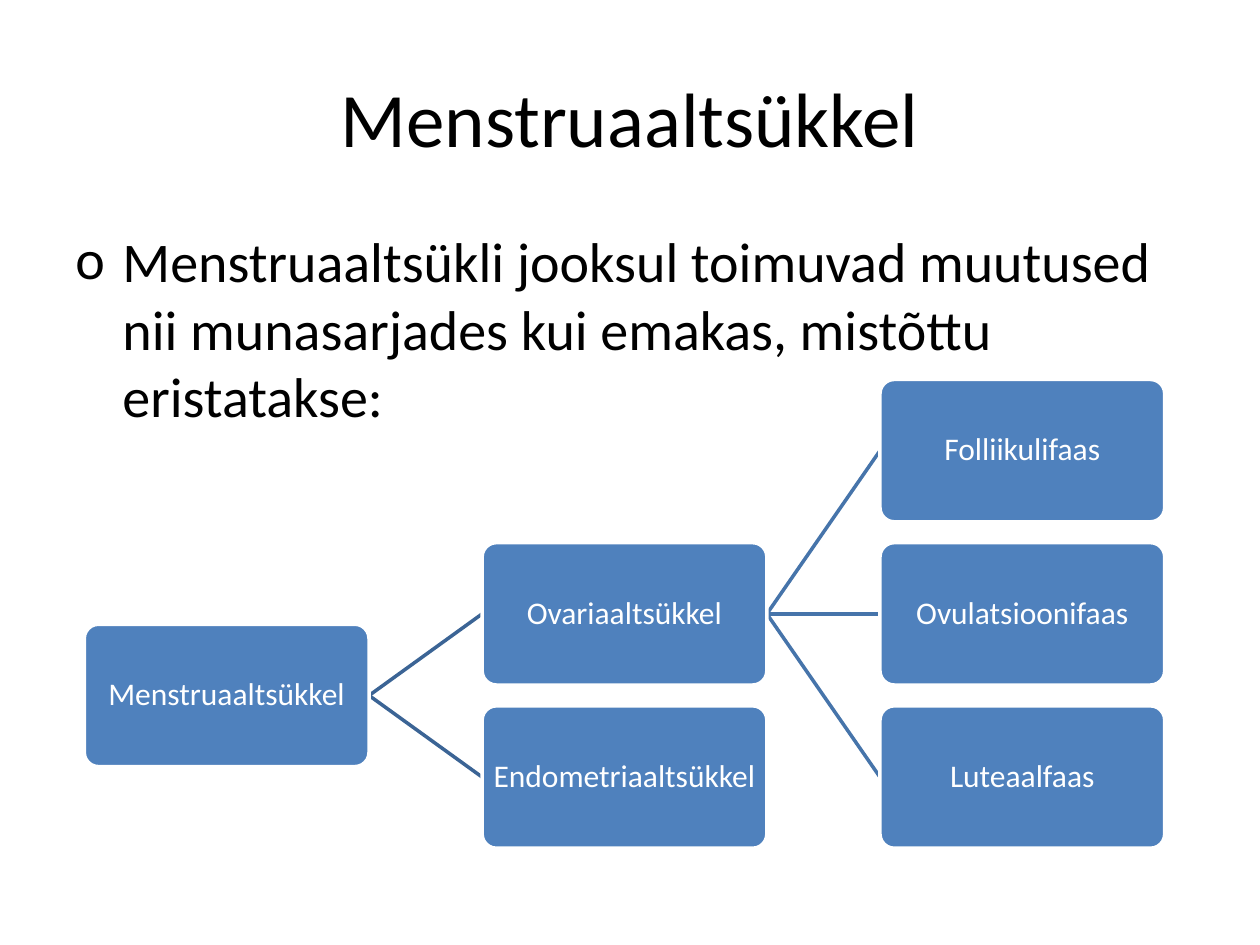
from lxml import etree
from pptx import Presentation
from pptx import util as u
from pptx.dml.color import RGBColor
from pptx.enum import shapes, text
from pptx.oxml.ns import qn


def color(value):
    return RGBColor.from_string(value)


def write(sp, words, size, value, align, anchor):
    tf = sp.text_frame
    tf.word_wrap = True
    tf.vertical_anchor = anchor
    p = tf.paragraphs[0]
    p.alignment = align
    r = p.add_run()
    r.text = words
    r.font.size = u.Pt(size)
    r.font.name = "Calibri"
    r.font.color.rgb = color(value)
    return tf, p


prs = Presentation()
prs.slide_width, prs.slide_height = u.Cm(25.4), u.Cm(19.05)
s = prs.slides.add_slide(prs.slide_layouts[6])

title = s.shapes.add_textbox(u.Cm(1.27), u.Cm(0.76), u.Cm(22.86), u.Cm(3.18))
write(title, "Menstruaaltsükkel", 44, "000000",
      text.PP_ALIGN.CENTER, text.MSO_ANCHOR.MIDDLE)

body = s.shapes.add_textbox(u.Cm(1.27), u.Cm(4.45), u.Cm(22.86), u.Cm(12.57))
tf, p = write(body, "Menstruaaltsükli jooksul toimuvad muutused nii munasarjades kui emakas, mistõttu eristatakse:",
              32, "000000", text.PP_ALIGN.LEFT, text.MSO_ANCHOR.TOP)
pPr = p._p.get_or_add_pPr()
pPr.set("marL", str(u.Cm(0.95)))
pPr.set("indent", str(-u.Cm(0.95)))
etree.SubElement(pPr, qn("a:buFont")).set("typeface", "Calibri")
etree.SubElement(pPr, qn("a:buChar")).set("char", "o")

left, top, width, height = 1.7, 7.65, 5.74, 2.87
col_step, row_step = 8.02, 3.29
nodes = {
    "Menstruaaltsükkel": (0, 1.5),
    "Ovariaaltsükkel": (1, 1),
    "Folliikulifaas": (2, 0),
    "Ovulatsioonifaas": (2, 1),
    "Luteaalfaas": (2, 2),
    "Endometriaaltsükkel": (1, 2),
}
links = [
    ("Menstruaaltsükkel", "Ovariaaltsükkel", "3B6495"),
    ("Menstruaaltsükkel", "Endometriaaltsükkel", "3B6495"),
    ("Ovariaaltsükkel", "Folliikulifaas", "4674AA"),
    ("Ovariaaltsükkel", "Ovulatsioonifaas", "4674AA"),
    ("Ovariaaltsükkel", "Luteaalfaas", "4674AA"),
]

boxes = {}
for name, (col, row) in nodes.items():
    sp = s.shapes.add_shape(shapes.MSO_SHAPE.ROUNDED_RECTANGLE,
                            u.Cm(left + col * col_step), u.Cm(top + row * row_step),
                            u.Cm(width), u.Cm(height))
    sp.adjustments[0] = 0.1
    sp.shadow.inherit = False
    sp.fill.solid()
    sp.fill.fore_color.rgb = color("4F81BD")
    sp.line.color.rgb = color("FFFFFF")
    sp.line.width = u.Pt(2)
    tf, p = write(sp, name, 18, "FFFFFF", text.PP_ALIGN.CENTER, text.MSO_ANCHOR.MIDDLE)
    tf.margin_left = tf.margin_right = tf.margin_top = tf.margin_bottom = u.Cm(0.03)
    p.line_spacing = 0.9
    boxes[name] = sp

for parent, child, value in links:
    line = s.shapes.add_connector(shapes.MSO_CONNECTOR.STRAIGHT, 0, 0, 0, 0)
    line.begin_connect(boxes[parent], 3)
    line.end_connect(boxes[child], 1)
    line.line.color.rgb = color(value)
    line.line.width = u.Pt(2)
    etree.SubElement(line._element.spPr, qn("a:effectLst"))
    boxes[parent]._element.addprevious(line._element)

prs.save("out.pptx")
